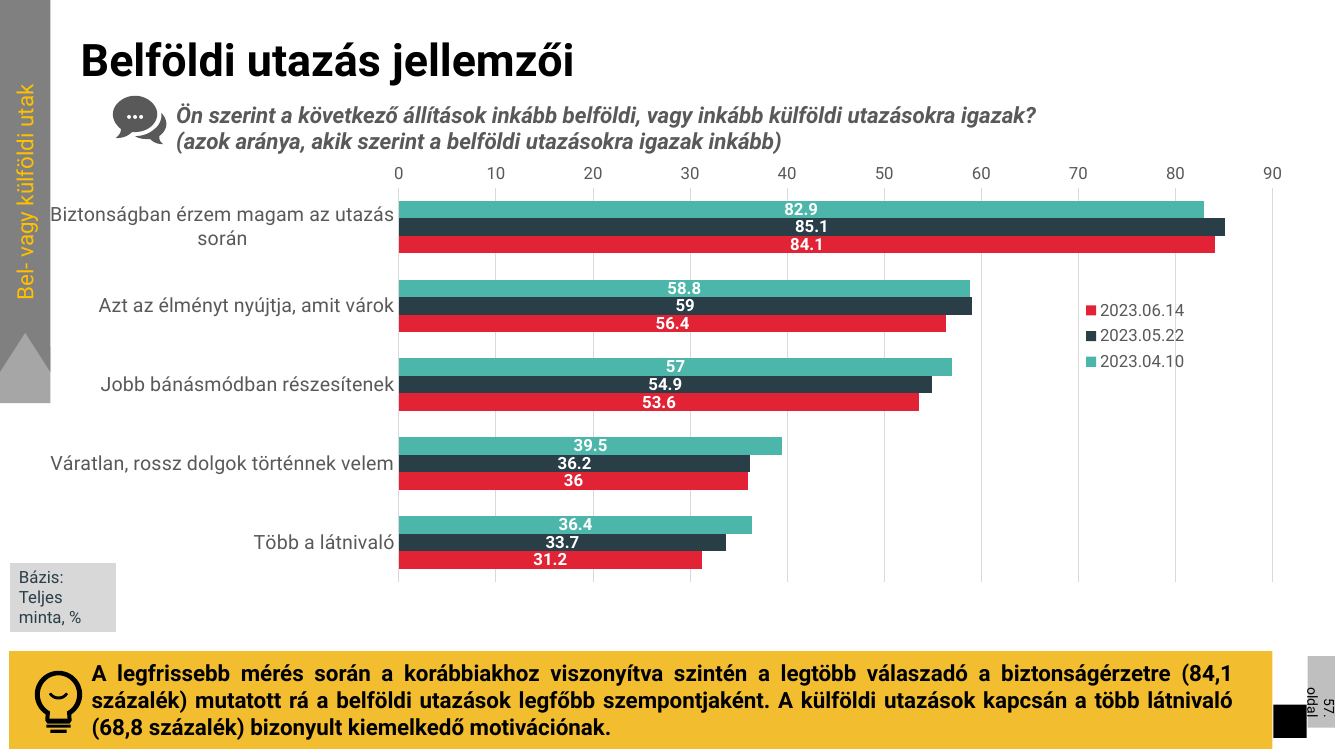
from math import cos, radians, sin

from lxml.etree import SubElement
from pptx import Presentation
from pptx.chart.data import CategoryChartData
from pptx.dml.color import RGBColor
from pptx.enum.chart import XL_CHART_TYPE, XL_LABEL_POSITION, XL_LEGEND_POSITION, XL_TICK_MARK
from pptx.enum.shapes import MSO_SHAPE
from pptx.enum.text import MSO_ANCHOR, MSO_AUTO_SIZE, PP_ALIGN
from pptx.oxml.ns import qn
from pptx.util import Inches, Pt

FONT = "Roboto"
BLACK, GREY, DARK, GRID = "000000", "595959", "293E47", "D9D9D9"


def colour(value):
    return RGBColor.from_string(value)


def arc(cx, cy, rx, ry, start, end, steps=40):
    angles = [radians(start + (end - start) * i / steps) for i in range(steps + 1)]
    return [(cx + rx * cos(a), cy + ry * sin(a)) for a in angles]


def curve(start, *segments, steps=10):
    points = [start]
    for x1, y1, x2, y2, x3, y3 in segments:
        x0, y0 = points[-1]
        for i in range(1, steps + 1):
            t = i / steps
            u = 1 - t
            points.append((
                u**3 * x0 + 3 * u * u * t * x1 + 3 * u * t * t * x2 + t**3 * x3,
                u**3 * y0 + 3 * u * u * t * y1 + 3 * u * t * t * y2 + t**3 * y3,
            ))
    return points


def block(left, top, width, height):
    right, bottom = left + width, top + height
    return [(left, top), (right, top), (right, bottom), (left, bottom)]


class Slide:
    def __init__(self, presentation):
        self.slide = presentation.slides.add_slide(presentation.slide_layouts[5])
        self.shapes = self.slide.shapes

    def style(self, font, size, fill, bold=False, italic=False):
        font.name, font.size = FONT, Pt(size)
        font.bold, font.italic = bold, italic
        font.color.rgb = colour(fill)

    def add_lines(self, shape, lines, size, fill, bold=False, italic=False,
                  align=PP_ALIGN.LEFT, anchor=MSO_ANCHOR.TOP):
        frame = shape.text_frame
        frame.word_wrap = True
        frame.auto_size = MSO_AUTO_SIZE.NONE
        frame.vertical_anchor = anchor
        for i, line in enumerate(lines):
            paragraph = frame.add_paragraph() if i else frame.paragraphs[0]
            paragraph.alignment = align
            run = paragraph.add_run()
            run.text = line
            self.style(run.font, size, fill, bold, italic)
        return frame

    def title(self, at, line):
        title = self.shapes.title
        title.left, title.top, title.width, title.height = map(Inches, at)
        frame = self.add_lines(title, [line], 32, BLACK, bold=True)
        frame.margin_left = Inches(0.3)
        frame.paragraphs[0].line_spacing = 0.9

    def text(self, at, lines, size, fill, **options):
        box = self.shapes.add_textbox(*map(Inches, at))
        self.add_lines(box, lines, size, fill, **options)
        return box

    def finish(self, shape, fill, line=None):
        shape.shadow.inherit = False
        shape.fill.solid()
        shape.fill.fore_color.rgb = colour(fill)
        if line:
            shape.line.color.rgb = colour(line)
            shape.line.width = Pt(1.5)
        else:
            shape.line.fill.background()
        return shape

    def rectangle(self, at, fill, line=None):
        return self.finish(self.shapes.add_shape(MSO_SHAPE.RECTANGLE, *map(Inches, at)), fill, line)

    def outline(self, fill, *contours):
        builder = None
        for contour in contours:
            points = [(Inches(x), Inches(y)) for x, y in contour]
            if builder:
                builder.move_to(*points[0])
            else:
                builder = self.shapes.build_freeform(*points[0], scale=1.0)
            builder.add_line_segments(points[1:], close=True)
        return self.finish(builder.convert_to_shape(), fill)

    def place(self, element, index, x, y, w, h, inner=False):
        layout = element.find(qn("c:layout"))
        if layout is None:
            layout = SubElement(element, qn("c:layout"))
            element.insert(index, layout)
        manual = SubElement(layout, qn("c:manualLayout"))
        values = [("xMode", "edge"), ("yMode", "edge"), ("x", x), ("y", y), ("w", w), ("h", h)]
        if inner:
            values.insert(0, ("layoutTarget", "inner"))
        for tag, value in values:
            SubElement(manual, qn(f"c:{tag}")).set("val", str(value))

    def bar_chart(self, at, categories, series):
        data = CategoryChartData()
        data.categories = categories
        for name, _, values in series:
            data.add_series(name, values)
        chart = self.shapes.add_chart(XL_CHART_TYPE.BAR_CLUSTERED, *map(Inches, at), data).chart
        chart.has_title = False
        self.style(chart.font, 10, BLACK)
        plot = chart.plots[0]
        plot.gap_width, plot.overlap, plot.vary_by_categories = 150, 0, False
        for bars, (_, fill, _) in zip(plot.series, series):
            bars.format.fill.solid()
            bars.format.fill.fore_color.rgb = colour(fill)
            labels = bars.data_labels
            labels.show_value = True
            labels.position = XL_LABEL_POSITION.CENTER
            self.style(labels.font, 12, "FFFFFF", bold=True)

        for axis, size in ((chart.category_axis, 14), (chart.value_axis, 12)):
            axis.major_tick_mark = axis.minor_tick_mark = XL_TICK_MARK.NONE
            self.style(axis.tick_labels.font, size, GREY)
        chart.category_axis.reverse_order = True
        scale = chart.value_axis
        scale.minimum_scale, scale.maximum_scale, scale.major_unit = 0, 90, 10
        scale.format.line.fill.background()
        for line in (chart.category_axis.format.line, scale.major_gridlines.format.line):
            line.color.rgb = colour(GRID)
            line.width = Pt(0.75)

        chart.has_legend = True
        legend = chart.legend
        legend.position = XL_LEGEND_POSITION.RIGHT
        legend.include_in_layout = False
        self.style(legend.font, 12, GREY)
        root = chart.element.chart
        self.place(root.plotArea, 0, 0.28, 0.05, 0.7, 0.81, inner=True)
        self.place(root.find(qn("c:legend")), 1, 0.82, 0.27, 0.1, 0.17)


def main():
    presentation = Presentation()
    presentation.slide_width, presentation.slide_height = Inches(13.33), Inches(7.5)
    page = Slide(presentation)

    page.rectangle((12.63, 6.99, 0.33, 0.33), BLACK)
    page.title((0.5, 0.32, 9.59, 1.11), "Belföldi utazás jellemzői")
    page_number = page.rectangle((12.97, 6.51, 0.27, 0.71), "BFBFBF")
    page.add_lines(page_number, ["57. oldal"], 10, BLACK, align=PP_ALIGN.RIGHT, anchor=MSO_ANCHOR.MIDDLE)
    page_number.element.txBody.bodyPr.set("vert", "vert")

    page.outline("A6A6A6", [(0, 4), (0.5, 4), (0.5, 3.44), (0.25, 3.21), (0, 3.44)])
    page.outline("808080", [(0, 3.69), (0.25, 3.3), (0.5, 3.69), (0.5, 0), (0, 0)])
    page.text((1.65, 0.95, 11.5, 0.55), [
        "Ön szerint a következő állítások inkább belföldi, vagy inkább külföldi utazásokra igazak?",
        "(azok aránya, akik szerint a belföldi utazásokra igazak inkább)",
    ], 16, GREY, bold=True, italic=True)

    page.rectangle((0.09, 6.46, 12.53, 0.97), "F2BE30")
    page.text((0.81, 6.49, 11.53, 0.91), [
        "A legfrissebb mérés során a korábbiakhoz viszonyítva szintén a legtöbb válaszadó a "
        "biztonságérzetre (84,1 százalék) mutatott rá a belföldi utazások legfőbb szempontjaként. "
        "A külföldi utazások kapcsán a több látnivaló (68,8 százalék) bizonyult kiemelkedő motivációnak."
    ], 16, BLACK, bold=True, align=PP_ALIGN.JUSTIFY)

    glass = arc(0.58, 6.89, 0.235, 0.235, 123, 417) + [(0.71, 7.15), (0.69, 7.18), (0.47, 7.18), (0.45, 7.15)]
    hollow = arc(0.58, 6.89, 0.185, 0.19, 117, 423) + [(0.67, 7.13), (0.49, 7.13)]
    smile = arc(0.58, 6.83, 0.11, 0.11, 150, 30) + arc(0.58, 6.82, 0.09, 0.09, 35, 145)
    page.outline(BLACK, glass, hollow, smile, block(0.46, 7.19, 0.24, 0.03), block(0.5, 7.24, 0.16, 0.03))

    base = page.rectangle((0.09, 5.57, 1.07, 0.71), "D8D8D8", "FFFFFF")
    page.add_lines(base, ["Bázis:", "Teljes minta, %"], 12, DARK)

    page.outline(GREY, curve(
        (1.58, 1.36), (1.58, 1.39, 1.59, 1.41, 1.62, 1.43), (1.57, 1.43, 1.53, 1.42, 1.49, 1.38),
        (1.44, 1.38, 1.38, 1.38, 1.34, 1.35), (1.41, 1.35, 1.47, 1.33, 1.52, 1.29),
        (1.58, 1.25, 1.61, 1.18, 1.6, 1.12), (1.63, 1.15, 1.65, 1.19, 1.65, 1.23),
        (1.65, 1.28, 1.62, 1.32, 1.58, 1.35)))
    bubble = curve(
        (1.34, 0.95), (1.22, 0.95, 1.12, 1.04, 1.12, 1.13), (1.12, 1.19, 1.15, 1.24, 1.2, 1.28),
        (1.2, 1.32, 1.18, 1.34, 1.15, 1.37), (1.2, 1.37, 1.26, 1.36, 1.31, 1.31),
        (1.46, 1.32, 1.56, 1.23, 1.56, 1.13), (1.56, 1.04, 1.46, 0.95, 1.34, 0.95))
    page.outline(GREY, bubble, *(arc(x, 1.16, 0.02, 0.02, 0, 360) for x in (1.28, 1.34, 1.4)))

    section = page.text((-1.36, 1.29, 3.21, 0.37), ["Bel- vagy külföldi utak"], 16, "FFC000")
    section.rotation = 270

    page.bar_chart((0.49, 1.62, 12.38, 4.83), [
        "Biztonságban érzem magam az utazás során",
        "Azt az élményt nyújtja, amit várok",
        "Jobb bánásmódban részesítenek",
        "Váratlan, rossz dolgok történnek velem",
        "Több a látnivaló",
    ], [
        ("2023.04.10", "4BB6A9", (82.9, 58.8, 57, 39.5, 36.4)),
        ("2023.05.22", DARK, (85.1, 59, 54.9, 36.2, 33.7)),
        ("2023.06.14", "E22335", (84.1, 56.4, 53.6, 36, 31.2)),
    ])

    presentation.save("out.pptx")


if __name__ == "__main__":
    main()
